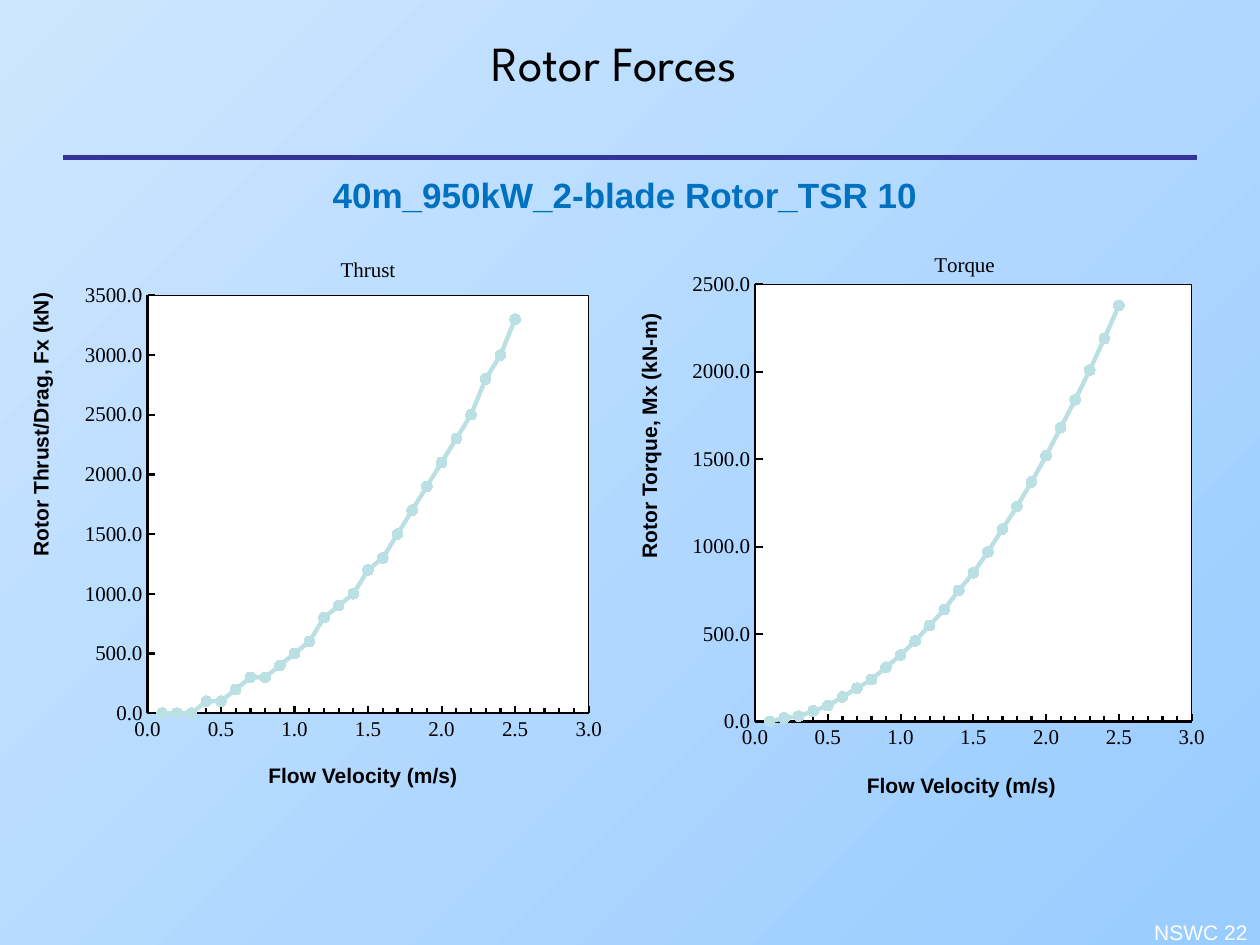
from lxml import etree
from pptx import Presentation
from pptx.chart.data import XyChartData
from pptx.dml.color import RGBColor
from pptx.enum import chart as charts, shapes, text
from pptx.oxml import parse_xml
from pptx.oxml.ns import nsdecls, qn
from pptx.util import Inches, Pt

SERIF = "Times New Roman"
VELOCITIES = [step / 10 for step in range(1, 26)]
THRUST = [0, 0, 0, 100, 100, 200, 300, 300, 400, 500, 600, 800, 900,
          1000, 1200, 1300, 1500, 1700, 1900, 2100, 2300, 2500, 2800, 3000, 3300]
TORQUE = [0, 20, 30, 60, 90, 140, 190, 240, 310, 380, 460, 550, 640,
          750, 850, 970, 1100, 1230, 1370, 1520, 1680, 1840, 2010, 2190, 2380]


def color(value):
    return RGBColor.from_string(value)


def style_font(font, size, name, hex_color="000000", bold=False):
    font.size = Pt(size)
    font.name = name
    font.bold = bold
    font.color.rgb = color(hex_color)


def add_label(slide, box, words, size=12, hex_color="000000", bold=True,
              align=text.PP_ALIGN.CENTER, rotation=0):
    label = slide.shapes.add_textbox(*map(Inches, box))
    label.rotation = rotation
    frame = label.text_frame
    frame.word_wrap = True
    paragraph = frame.paragraphs[0]
    paragraph.alignment = align
    run = paragraph.add_run()
    run.text = words
    style_font(run.font, size, "Arial", hex_color, bold)


def set_layout(parent, index, **fractions):
    """Fix a chart part's place, in fractions of the chart's size."""
    layout = parent.find(qn("c:layout"))
    if layout is None:
        layout = etree.Element(qn("c:layout"))
        parent.insert(index, layout)
    manual = etree.SubElement(layout, qn("c:manualLayout"))
    if "w" in fractions:
        etree.SubElement(manual, qn("c:layoutTarget"), val="inner")
    for mode in ("xMode", "yMode"):
        etree.SubElement(manual, qn(f"c:{mode}"), val="edge")
    for key, value in fractions.items():
        etree.SubElement(manual, qn(f"c:{key}"), val=str(value))


def style_axis(axis, maximum, major):
    axis.minimum_scale = 0
    axis.maximum_scale = maximum
    axis.major_unit = major
    axis.has_major_gridlines = False
    axis.major_tick_mark = charts.XL_TICK_MARK.INSIDE
    axis.tick_labels.number_format = "0.0"
    axis.tick_labels.number_format_is_linked = False
    style_font(axis.tick_labels.font, 12, SERIF)
    axis.format.line.color.rgb = color("000000")
    axis.format.line.width = Pt(1.25)


def style_curve(series):
    series.smooth = False
    series.format.line.color.rgb = color("BBE0E3")
    series.format.line.width = Pt(2.5)
    marker = series.marker
    marker.style = charts.XL_MARKER_STYLE.CIRCLE
    marker.size = 6
    marker.format.fill.solid()
    marker.format.fill.fore_color.rgb = color("BBE0E3")
    marker.format.line.color.rgb = color("BBE0E3")


def add_force_chart(slide, box, name, forces, maximum, plot, title_at):
    data = XyChartData()
    curve = data.add_series(name)
    for velocity, force in zip(VELOCITIES, forces):
        curve.add_data_point(velocity, force)
    chart = slide.shapes.add_chart(
        charts.XL_CHART_TYPE.XY_SCATTER_LINES, *map(Inches, box), data).chart
    style_font(chart.font, 10, SERIF)
    chart.has_legend = False
    chart.plots[0].vary_by_categories = False

    chart.has_title = True
    title = chart.chart_title
    title.include_in_layout = False
    run = title.text_frame.paragraphs[0].add_run()
    run.text = name
    style_font(run.font, 12, SERIF)
    set_layout(title._element, 1, **dict(zip("xy", title_at)))

    style_axis(chart.category_axis, 3, 0.5)
    chart.category_axis.minor_unit = 0.1
    chart.category_axis.minor_tick_mark = charts.XL_TICK_MARK.INSIDE
    style_axis(chart.value_axis, maximum, 500)
    style_curve(chart.plots[0].series[0])

    area = chart._chartSpace.find(".//" + qn("c:plotArea"))
    set_layout(area, 0, **dict(zip("xywh", plot)))
    area.append(parse_xml(
        f'<c:spPr {nsdecls("c", "a")}>'
        '<a:solidFill><a:srgbClr val="FFFFFF"/></a:solidFill>'
        '<a:ln w="9525"><a:solidFill><a:srgbClr val="000000"/></a:solidFill></a:ln>'
        '</c:spPr>'))


def add_force_panel(slide, box, name, forces, maximum, plot, title_at,
                    force_label, force_label_top, velocity_label_at):
    """Chart with its axis captions, placed from the panel's corner."""
    left, top = box[:2]
    add_force_chart(slide, box, name, forces, maximum, plot, title_at)
    x, y = velocity_label_at
    add_label(slide, (left + x, top + y, 2.42, 0.3), "Flow Velocity (m/s)")
    add_label(slide, (left - 1.47, top + force_label_top, 2.58, 0.3),
              force_label, rotation=270)


def add_header(slide, box):
    left, top, width, height = box
    rule = slide.shapes.add_connector(
        shapes.MSO_CONNECTOR.STRAIGHT, Inches(left + 0.25), Inches(top + 1.17),
        Inches(left + 9.25), Inches(top + 1.17))
    rule.line.color.rgb = color("333399")
    rule.line.width = Pt(3)
    etree.SubElement(rule._element.spPr, qn("a:effectLst"))

    title = slide.shapes.title
    title.left, title.top, title.width, title.height = map(Inches, box)
    title.text_frame.vertical_anchor = text.MSO_ANCHOR.MIDDLE
    paragraph = title.text_frame.paragraphs[0]
    paragraph.alignment = text.PP_ALIGN.CENTER
    run = paragraph.add_run()
    run.text = "Rotor Forces"
    style_font(run.font, 28, "League Spartan")
    add_label(slide, (left + 0.17, top + 1.25, width - 0.17, 0.44),
              "40m_950kW_2-blade Rotor_TSR 10", 20, "0070C0")


def paint_background(slide):
    fill = slide.background.fill
    fill.gradient()
    fill.gradient_angle = 315
    for stop, hex_color in zip(fill.gradient_stops, ("CDE6FF", "99CCFF")):
        stop.color.rgb = color(hex_color)


def main():
    deck = Presentation()
    deck.slide_width, deck.slide_height = Inches(10), Inches(7.5)
    slide = deck.slides.add_slide(deck.slide_layouts[5])
    paint_background(slide)
    add_header(slide, (0.25, 0.08, 9.25, 0.83))
    add_force_panel(slide, (5.33, 1.83, 4.67, 4.5), "Torque", TORQUE, 2500,
                    (0.142, 0.095, 0.742, 0.771), (0.44, 0.03),
                    "Rotor Torque, Mx (kN-m)", 1.48, (1.09, 4.25))
    add_force_panel(slide, (0.5, 1.92, 4.83, 4.33), "Thrust", THRUST, 3500,
                    (0.139, 0.098, 0.725, 0.766), (0.45, 0.02),
                    "Rotor Thrust/Drag, Fx (kN)", 1.3, (1.17, 4.08))
    add_label(slide, (7.67, 7.25, 2.33, 0.42), "NSWC 22", hex_color="FFFFFF",
              bold=False, align=text.PP_ALIGN.RIGHT)
    deck.save("out.pptx")


if __name__ == "__main__":
    main()
